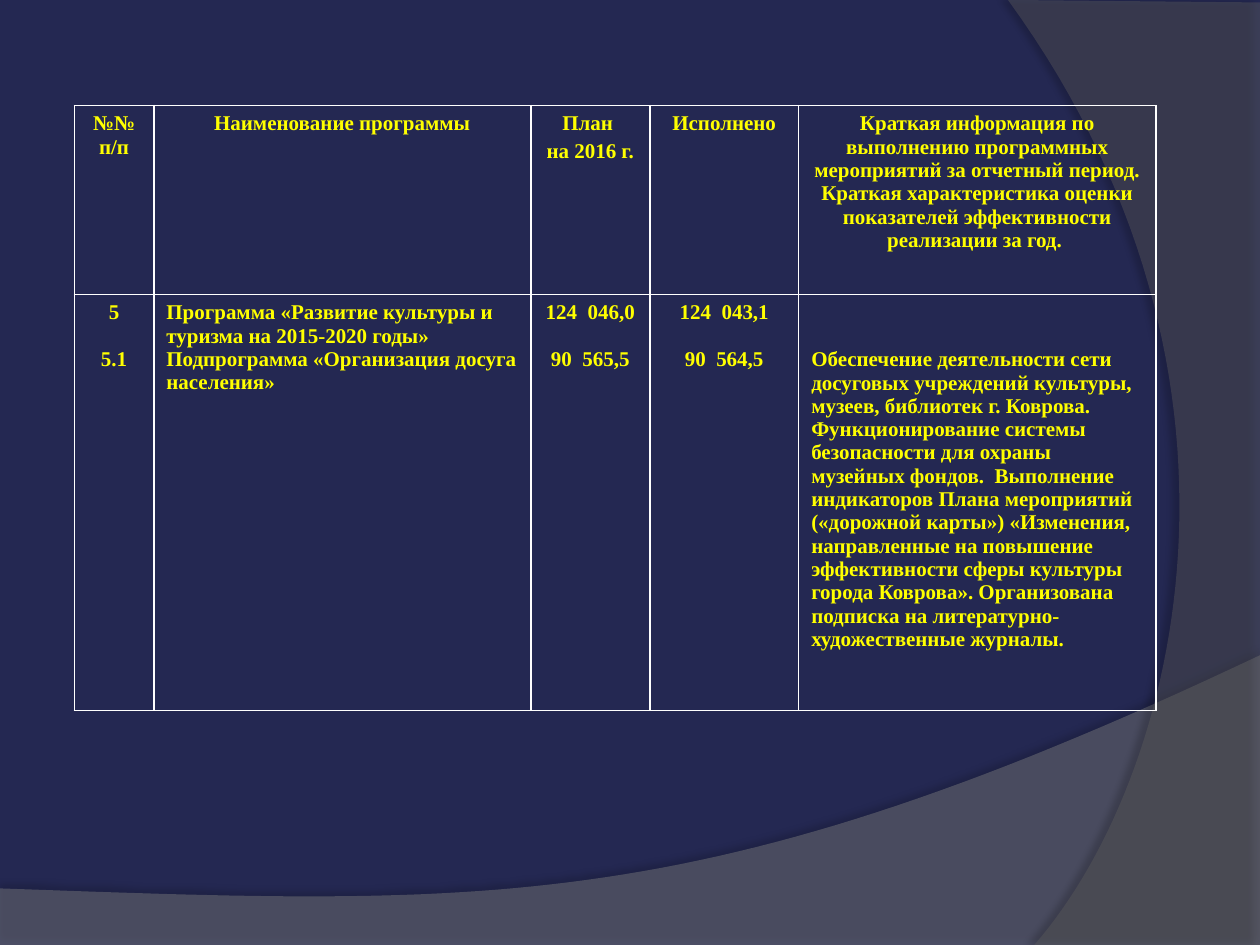
"""Build a slide with a table on the city culture programme."""
import pptx
import pptx.dml.color
import pptx.enum.text
import pptx.oxml
import pptx.oxml.ns
import pptx.util
from lxml import etree

Cm, Pt = pptx.util.Cm, pptx.util.Pt
RGB = pptx.dml.color.RGBColor.from_string
qn = pptx.oxml.ns.qn
ALIGN = pptx.enum.text.PP_ALIGN

THEME = {
    "back": "242852", "rule": "FFFFFF", "shade": "000000",
    "low": "7F7F7F", "side": "5E5E5E",
    "text": {"name": "Times New Roman", "size": Pt(12), "bold": True},
    "ink": "FFFF00", "line": Pt(1),
}

WAVES = [
    {"fill": "low", "alpha": 45, "dark": 35, "dist": 3.5, "turn": 270,
     "edge": [(0, 19.05), (25.4, 19.05)],
     "curve": [(25.4, 13.21), (14.2, 18.52), (9.93, 18.26), (0, 17.91)]},
    {"fill": "side", "alpha": 40, "dark": 45, "dist": 4, "turn": 180,
     "edge": [(25.4, 0.05), (25.4, 19.05)],
     "curve": [(20.85, 19.05), (23.75, 15.72), (25.86, 7.62), (20.32, 0)]},
]

COLS = [1.6, 7.6, 2.4, 3, 7.2]
ROWS = [3.81, 8.38]
LEFT, TOP = 1.5, 2.13
LINE, SMALL = 13.4, 2.4

CELLS = [
    [
        {"text": ["№№ п/п"]},
        {"text": ["Наименование программы"]},
        {"text": ["План ", "на 2016 г."], "gap": SMALL},
        {"text": ["Исполнено"]},
        {"text": ["Краткая информация по выполнению программных мероприятий "
                  "за отчетный период. Краткая характеристика оценки "
                  "показателей эффективности реализации за год. "]},
    ],
    [
        {"text": ["5", "5.1"], "gap": LINE},
        {"text": ["Программа «Развитие культуры и туризма на 2015-2020 годы»",
                  "Подпрограмма «Организация досуга населения»"],
         "align": ALIGN.LEFT},
        {"text": ["124  046,0", "90  565,5"], "gap": LINE},
        {"text": ["124  043,1", "90  564,5"], "gap": LINE},
        {"text": ["Обеспечение деятельности сети досуговых учреждений "
                  "культуры, музеев, библиотек г. Коврова. Функционирование "
                  "системы безопасности для охраны музейных фондов.  "
                  "Выполнение индикаторов Плана мероприятий («дорожной "
                  "карты») «Изменения, направленные на повышение "
                  "эффективности сферы культуры города Коврова». "
                  "Организована подписка на литературно-художественные "
                  "журналы."],
         "align": ALIGN.LEFT, "drop": 2 * LINE},
    ],
]


def bend(curve, steps=60):
    """Return points along a cubic curve."""
    spots = []
    for step in range(steps + 1):
        t = step / steps
        mix = ((1 - t) ** 3, 3 * t * (1 - t) ** 2, 3 * t * t * (1 - t), t ** 3)
        spots.append(tuple(sum(m * p[axis] for m, p in zip(mix, curve))
                           for axis in (0, 1)))
    return spots


def tint(parent, color, alpha):
    """Add a part-clear colour to a parent element."""
    node = etree.SubElement(parent, qn("a:srgbClr"), val=color)
    etree.SubElement(node, qn("a:alpha"), val=str(alpha * 1000))


def add_wave(slide, wave):
    """Draw one clear wave with its soft shadow."""
    spots = [(Cm(x), Cm(y)) for x, y in wave["edge"] + bend(wave["curve"])]
    pen = slide.shapes.build_freeform(*spots[0])
    pen.add_line_segments(spots[1:], close=True)
    shape = pen.convert_to_shape()
    shape.fill.solid()
    shape.line.fill.background()
    shape.shadow.inherit = False
    props = shape._element.spPr
    tint(props.find(qn("a:solidFill")), THEME[wave["fill"]], wave["alpha"])
    cast = etree.SubElement(
        props.find(qn("a:effectLst")), qn("a:outerShdw"),
        blurRad=str(Pt(4)), dist=str(Pt(wave["dist"])),
        dir=str(wave["turn"] * 60000), algn="ctr", rotWithShape="0")
    tint(cast, THEME["shade"], wave["dark"])


def fill_cell(cell, item):
    """Set the borders and the text of one cell."""
    props = cell._tc.get_or_add_tcPr()
    for side in "LRTB":
        edge = etree.SubElement(props, qn("a:ln" + side),
                                w=str(THEME["line"]))
        tint(etree.SubElement(edge, qn("a:solidFill")), THEME["rule"], 100)
    cell.fill.background()
    cell.margin_top = Cm(0.13) + Pt(item.get("drop", 0))
    frame = cell.text_frame
    for spot, words in enumerate(item["text"]):
        para = frame.add_paragraph() if spot else frame.paragraphs[0]
        para.alignment = item.get("align", ALIGN.CENTER)
        if spot:
            para.space_before = Pt(item.get("gap", 0))
        run = para.add_run()
        run.text = words
        for key, value in THEME["text"].items():
            setattr(run.font, key, value)
        run.font.color.rgb = RGB(THEME["ink"])


def add_grid(slide):
    """Add the table and fill its cells."""
    grid = slide.shapes.add_table(
        len(ROWS), len(COLS), Cm(LEFT), Cm(TOP),
        Cm(sum(COLS)), Cm(sum(ROWS))).table
    for key in ("first_row", "horz_banding"):
        setattr(grid, key, False)
    for col, width in zip(grid.columns, COLS):
        col.width = Cm(width)
    for row, height, items in zip(grid.rows, ROWS, CELLS):
        row.height = Cm(height)
        for cell, item in zip(row.cells, items):
            fill_cell(cell, item)


def main():
    """Build and save the deck."""
    deck = pptx.Presentation()
    deck.slide_width, deck.slide_height = Cm(25.4), Cm(19.05)
    slide = deck.slides.add_slide(deck.slide_layouts[6])
    slide.background.fill.solid()
    slide.background.fill.fore_color.rgb = RGB(THEME["back"])
    for wave in WAVES:
        add_wave(slide, wave)
    add_grid(slide)
    deck.save("out.pptx")


if __name__ == "__main__":
    main()
